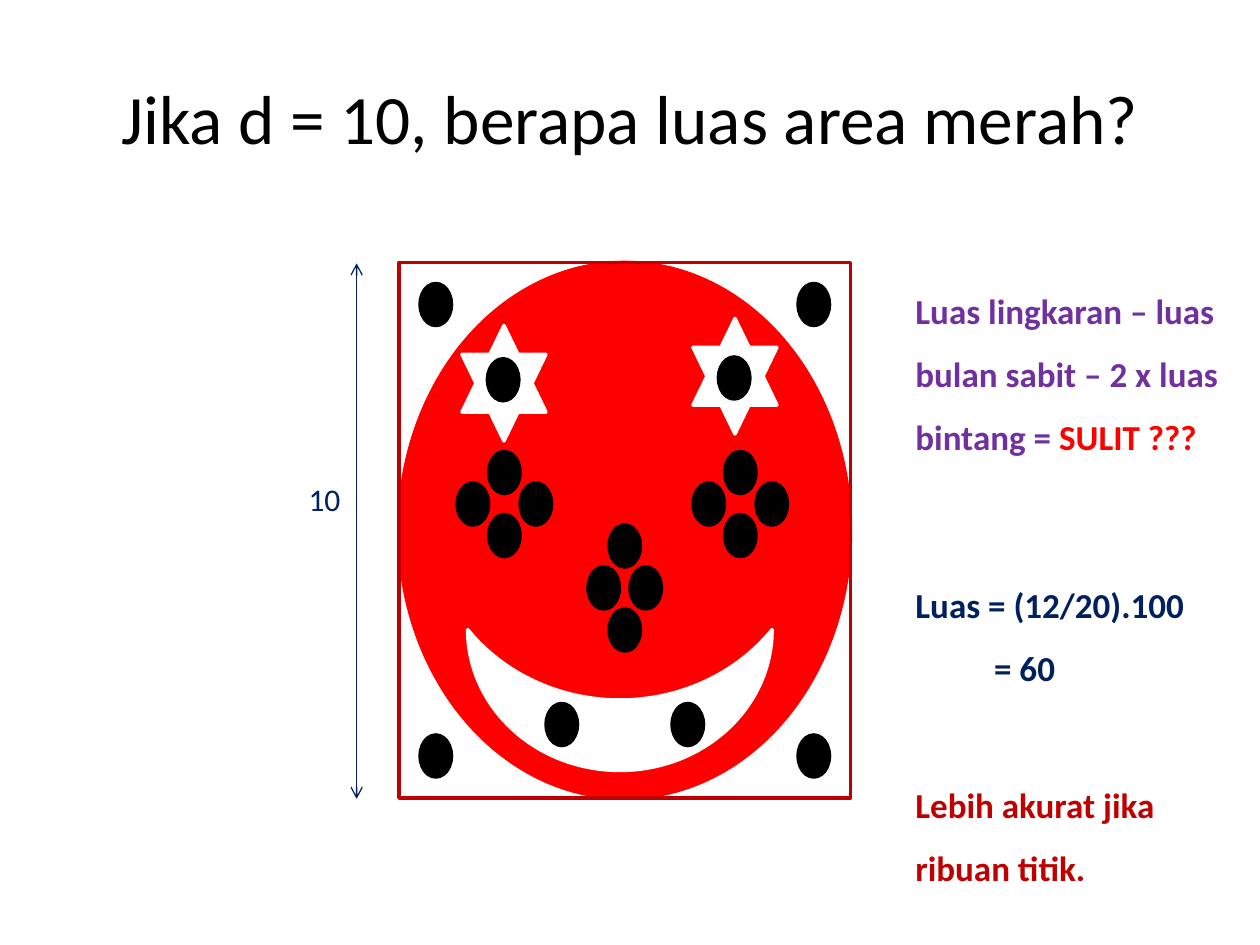
from dataclasses import dataclass
from itertools import product
from typing import Optional

from lxml import etree
from pptx import Presentation
from pptx.dml.color import RGBColor
from pptx.enum.shapes import MSO_CONNECTOR, MSO_SHAPE
from pptx.enum.text import MSO_ANCHOR, MSO_AUTO_SIZE, PP_ALIGN
from pptx.oxml.ns import qn
from pptx.util import Pt

OVAL, RECT = MSO_SHAPE.OVAL, MSO_SHAPE.RECTANGLE
MOON, STAR = MSO_SHAPE.MOON, MSO_SHAPE.STAR_6_POINT
LINE = MSO_CONNECTOR.STRAIGHT
MIDDLE, CENTER, LEFT = MSO_ANCHOR.MIDDLE, PP_ALIGN.CENTER, PP_ALIGN.LEFT
GROW = MSO_AUTO_SIZE.SHAPE_TO_FIT_TEXT

FONT = "Calibri"
COLORS = {
    "black": "000000", "white": "FFFFFF", "red": "FF0000",
    "dark red": "C00000", "purple": "7030A0", "navy": "002060",
}
DOT_W, DOT_H = 18, 24


@dataclass
class Box:
    x: float
    y: float
    w: float
    h: float

    def place(self) -> tuple:
        return Pt(self.x), Pt(self.y), Pt(self.w), Pt(self.h)


@dataclass
class Part:
    kind: int
    box: Box
    line: str
    fill: Optional[str] = None
    turn: float = 0


@dataclass
class Note:
    box: Box
    lines: list  # each line is a list of (text, color) runs
    indent: float = 0  # left margin of the lines after the first


def rgb(name: str) -> RGBColor:
    return RGBColor.from_string(COLORS[name])


def write(frame, lines, size=20, bold=False, align=LEFT, space=None, indent=0):
    """Fill a text frame with lines of (text, color) runs."""
    for i, runs in enumerate(lines):
        para = frame.paragraphs[0] if i == 0 else frame.add_paragraph()
        para.alignment = align
        para.line_spacing = space
        if i and indent:
            para._p.get_or_add_pPr().set("marL", str(Pt(indent)))
        for text, color in runs:
            run = para.add_run()
            run.text = text
            run.font.name = FONT
            run.font.size = Pt(size)
            run.font.bold = bold
            run.font.color.rgb = rgb(color)


def add_part(shapes, part: Part):
    shape = shapes.add_shape(part.kind, *part.box.place())
    shape.shadow.inherit = False
    shape.rotation = part.turn
    shape.line.color.rgb = rgb(part.line)
    shape.line.width = Pt(2)
    if part.fill:
        shape.fill.solid()
        shape.fill.fore_color.rgb = rgb(part.fill)
    else:
        shape.fill.background()


def add_text(shapes, box: Box, lines, wrap=True, **style):
    frame = shapes.add_textbox(*box.place()).text_frame
    frame.word_wrap = wrap
    frame.auto_size = GROW
    write(frame, lines, **style)


def add_arrow(shapes, x: float, top: float, end: float):
    """Draw a vertical line with an arrowhead at both ends."""
    arrow = shapes.add_connector(LINE, Pt(x), Pt(top), Pt(x), Pt(end))
    arrow.line.color.rgb = rgb("navy")
    arrow.line.width = Pt(0.75)
    ln = arrow.line._ln
    for tag in ("a:headEnd", "a:tailEnd"):
        etree.SubElement(ln, qn(tag)).set("type", "arrow")
    etree.SubElement(arrow._element.spPr, qn("a:effectLst"))


def diamond(x: float, y: float, dx: float, dy: float) -> list:
    """Give four dot places around a middle one."""
    return [(x - dx, y), (x, y - dy), (x + dx, y), (x, y + dy)]


FACE = Box(228, 150, 258, 306)
PARTS = [
    Part(OVAL, FACE, "red", "red"),
    Part(RECT, FACE, "dark red"),
    Part(MOON, Box(314, 313, 80.5, 174), "white", "white", 270),
    Part(STAR, Box(396, 182, 48, 66), "white", "white"),
    Part(STAR, Box(264, 186, 48, 66), "white", "white"),
]

CHEEKS = diamond(279.2, 276, 18, 18) + diamond(414, 276, 18, 18)
NOSE = diamond(348, 324, 12, 24)
CORNERS = list(product((240, 456), (162, 420)))
EYES = [(278.5, 205), (410.5, 204)]
TEETH = [(312, 402), (384, 402)]
DOTS = CHEEKS + NOSE + CORNERS + EYES + TEETH

NOTES = [
    Note(Box(516, 150, 192, 152.6), [[
        ("Luas lingkaran – luas bulan sabit – 2 x luas bintang = ", "purple"),
        ("SULIT ???", "red"),
    ]]),
    Note(Box(516, 318, 192, 80),
         [[("Luas = (12/20).100", "navy")], [("= 60", "navy")]], indent=45),
    Note(Box(516, 432, 186, 75.6),
         [[("Lebih akurat jika ribuan titik.", "dark red")]]),
]


def main():
    deck = Presentation()
    deck.slide_width, deck.slide_height = Pt(720), Pt(540)
    slide = deck.slides.add_slide(deck.slide_layouts[5])
    shapes = slide.shapes

    title = shapes.title
    title.left, title.top, title.width, title.height = Box(
        36, 21.6, 648, 90).place()
    title.text_frame.vertical_anchor = MIDDLE
    write(title.text_frame,
          [[("Jika d = 10, berapa luas area merah?", "black")]],
          size=39.6, align=CENTER)

    for part in PARTS:
        add_part(shapes, part)
    for x, y in DOTS:
        add_part(shapes, Part(OVAL, Box(x, y, DOT_W, DOT_H), "black", "black"))
    for note in NOTES:
        add_text(shapes, note.box, note.lines, bold=True, space=1.5,
                 indent=note.indent)

    scale = shapes.add_group_shape().shapes
    add_text(scale, Box(169.2, 270.7, 34.6, 28.8), [[("10", "navy")]],
             wrap=False, size=18)
    add_arrow(scale, 203.8, 150.5, 456.5)

    deck.save("out.pptx")


if __name__ == "__main__":
    main()
